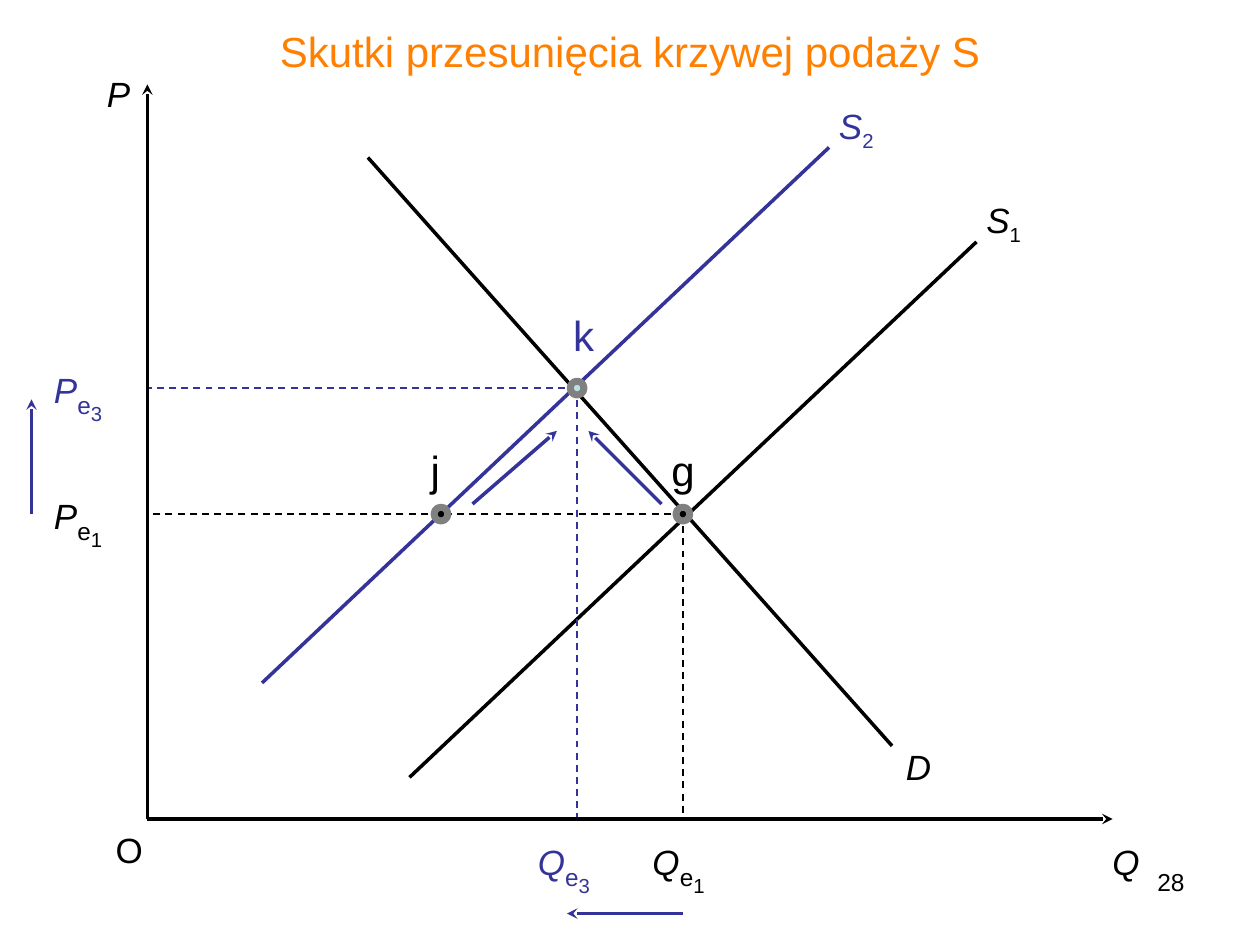
from dataclasses import dataclass

from lxml import etree
from pptx import Presentation
from pptx.dml.color import RGBColor
from pptx.enum.dml import MSO_LINE
from pptx.enum.shapes import MSO_CONNECTOR, MSO_SHAPE
from pptx.enum.text import MSO_ANCHOR, PP_ALIGN
from pptx.oxml.ns import qn
from pptx.util import Inches, Pt

LEFT, MID, RIGHT = PP_ALIGN.LEFT, PP_ALIGN.CENTER, PP_ALIGN.RIGHT
DASH = MSO_LINE.DASH
STRAIGHT = MSO_CONNECTOR.STRAIGHT
OVAL = MSO_SHAPE.OVAL
MIDDLE = MSO_ANCHOR.MIDDLE

FONT = "Arial"
COLORS = {
    "black": "000000",
    "blue": "333399",
    "pale": "BBE0E3",
    "gray": "808080",
    "orange": "FF8000",
}
ZERO_X, ZERO_Y = 1.17, 6.5
LOW_P, HIGH_P = 4.08, 3.08
LOW_Q, HIGH_Q = 4.58, 5.42
DOT = 0.11


@dataclass
class Line:
    start: tuple[float, float]
    end: tuple[float, float]
    color: str = "black"
    width: float = 2
    arrow: bool = False
    dash: bool = False


@dataclass
class Run:
    text: str
    size: float = 20
    italic: bool = False
    drop: int = 0


@dataclass
class Label:
    x: float
    y: float
    w: float
    h: float
    runs: list[Run]
    color: str = "black"
    align: PP_ALIGN = LEFT
    wrap: bool = False


@dataclass
class Dot:
    x: float
    y: float
    color: str = "black"


def rgb(name: str) -> RGBColor:
    return RGBColor.from_string(COLORS[name])


def add_run(para, part: Run, color: str) -> None:
    run = para.add_run()
    run.text = part.text
    font = run.font
    font.name, font.size, font.italic = FONT, Pt(part.size), part.italic
    font.color.rgb = rgb(color)
    if part.drop:
        run._r.get_or_add_rPr().set("baseline", str(-1000 * part.drop))


def draw_line(slide, line: Line) -> None:
    ends = [Inches(n) for n in (*line.start, *line.end)]
    shape = slide.shapes.add_connector(STRAIGHT, *ends)
    shape.line.color.rgb = rgb(line.color)
    shape.line.width = Pt(line.width)
    if line.dash:
        shape.line.dash_style = DASH
    if line.arrow:
        tip = etree.SubElement(shape.line._get_or_add_ln(), qn("a:tailEnd"))
        tip.set("type", "stealth")
    etree.SubElement(shape._element.spPr, qn("a:effectLst"))


def draw_dot(slide, dot: Dot) -> None:
    shape = slide.shapes.add_shape(
        OVAL, Inches(dot.x - DOT / 2), Inches(dot.y - DOT / 2), Inches(DOT), Inches(DOT)
    )
    shape.shadow.inherit = False
    shape.fill.solid()
    shape.fill.fore_color.rgb = rgb(dot.color)
    shape.line.color.rgb = rgb("gray")
    shape.line.width = Pt(4)


def draw_label(slide, label: Label) -> None:
    place = [Inches(n) for n in (label.x, label.y, label.w, label.h)]
    frame = slide.shapes.add_textbox(*place).text_frame
    frame.word_wrap = label.wrap
    para = frame.paragraphs[0]
    para.alignment = label.align
    for part in label.runs:
        add_run(para, part, label.color)


def set_title(slide, text: str) -> None:
    title = slide.shapes.title
    title.left, title.top = Inches(0.75), Inches(0)
    title.width, title.height = Inches(8.5), Inches(0.81)
    frame = title.text_frame
    frame.word_wrap = True
    frame.vertical_anchor = MIDDLE
    para = frame.paragraphs[0]
    para.alignment = MID
    add_run(para, Run(text, 24), "orange")


def level(x: float, y: float, name: str, mark: str, color: str) -> Label:
    runs = [Run(name, italic=True), Run("e", 24, drop=25), Run(mark, drop=50)]
    return Label(x, y, 0.75, 0.43, runs, color, wrap=True)


def curve(x: float, y: float, mark: str, color: str) -> Label:
    runs = [Run("S", italic=True), Run(mark, drop=25)]
    return Label(x, y, 0.49, 0.43, runs, color, MID)


def guides(q: float, p: float, color: str) -> list[Line]:
    ends = [(ZERO_X, p), (q, ZERO_Y)]
    return [Line((q, p), end, color, 1, dash=True) for end in ends]


LINES = [
    Line((7.08, 5.92), (2.92, 1.25)),
    Line((7.75, 1.92), (3.25, 6.17)),
    Line((6.58, 1.17), (2.08, 5.42), "blue"),
    *guides(HIGH_Q, LOW_P, "black"),
    *guides(LOW_Q, HIGH_P, "blue"),
    Line((ZERO_X, ZERO_Y), (8.83, ZERO_Y), arrow=True),
    Line((ZERO_X, ZERO_Y), (ZERO_X, 0.67), arrow=True),
    Line((0.25, LOW_P), (0.25, 3.17), "blue", arrow=True),
    Line((HIGH_Q, 7.25), (4.5, 7.25), "blue", arrow=True),
    Line((3.75, 4), (4.42, 3.42), "blue", arrow=True),
    Line((5.25, 4), (4.67, 3.42), "blue", arrow=True),
]
DOTS = [Dot(3.5, LOW_P), Dot(LOW_Q, HIGH_P, "pale"), Dot(HIGH_Q, LOW_P)]
LABELS = [
    Label(0.75, 0.53, 0.37, 0.43, [Run("P", italic=True)], wrap=True),
    Label(8.73, 6.62, 0.42, 0.43, [Run("Q", italic=True)]),
    Label(0.82, 6.53, 0.42, 0.43, [Run("O")]),
    level(0.33, 3.82, "P", "1", "black"),
    level(0.33, 2.82, "P", "3", "blue"),
    level(4.17, 6.57, "Q", "3", "blue"),
    level(5.08, 6.57, "Q", "1", "black"),
    Label(7.09, 5.87, 0.4, 0.43, [Run("D", italic=True)], align=MID),
    curve(7.72, 1.53, "1", "black"),
    curve(6.55, 0.78, "2", "blue"),
    Label(3.32, 3.48, 0.28, 0.5, [Run("j", 24)]),
    Label(5.23, 3.48, 0.39, 0.5, [Run("g", 24)]),
    Label(4.45, 2.41, 0.37, 0.5, [Run("k", 24)], "blue"),
    Label(7.17, 6.83, 2.33, 0.52, [Run("28", 14)], align=RIGHT, wrap=True),
]


def main() -> None:
    deck = Presentation()
    deck.slide_width, deck.slide_height = Inches(10), Inches(7.5)
    slide = deck.slides.add_slide(deck.slide_layouts[5])
    set_title(slide, "Skutki przesunięcia krzywej podaży S")
    for line in LINES:
        draw_line(slide, line)
    for dot in DOTS:
        draw_dot(slide, dot)
    for label in LABELS:
        draw_label(slide, label)
    deck.save("out.pptx")


if __name__ == "__main__":
    main()
